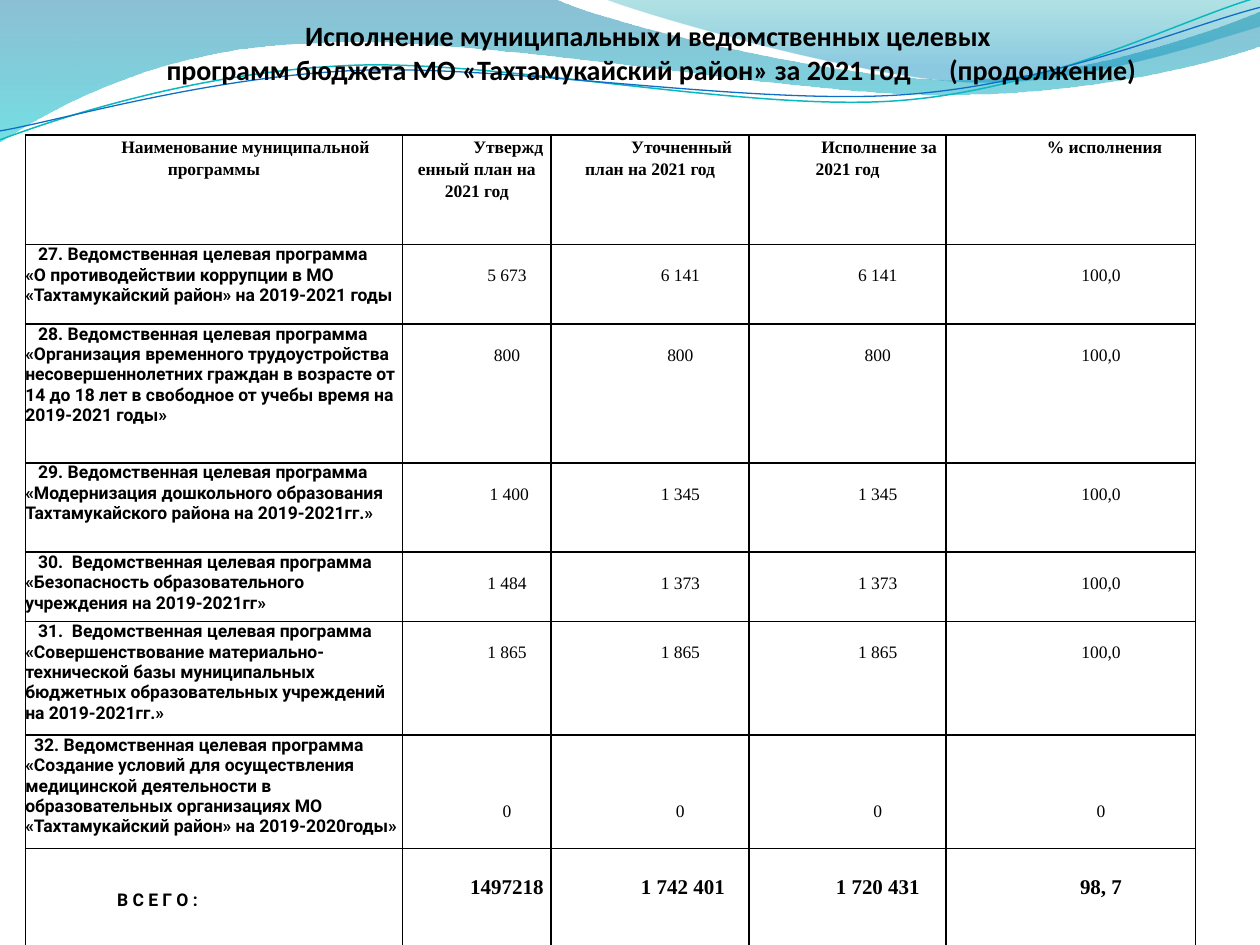
from dataclasses import dataclass

from lxml.etree import SubElement
from pptx import Presentation
from pptx.dml.color import RGBColor
from pptx.enum.text import MSO_ANCHOR, PP_ALIGN as Align
from pptx.oxml.ns import qn
from pptx.util import Cm, Pt


@dataclass(frozen=True)
class Theme:
    ink: str = "000000"
    blue: str = "0074A1"
    cyan: str = "00C6CF"
    teal: str = "00A1A9"
    sky: str = "008BBF"
    teal_line: str = "0AB8BF"
    blue_line: str = "0F6FC6"
    title_font: str = "Calibri"
    name_font: str = "Roboto"
    value_font: str = "Times New Roman"
    title_size: float = 16
    body_size: float = 10
    total_size: float = 12


THEME = Theme()


@dataclass(frozen=True)
class Stop:
    position: float
    color: str
    opacity: int


@dataclass(frozen=True)
class Wave:
    """Outline in cm: two numbers are a straight step, six are a Bézier curve."""
    start: tuple
    steps: tuple
    stops: tuple = ()
    line: str = ""
    width: float = 0


@dataclass(frozen=True)
class Program:
    name: str
    values: tuple
    height: float
    name_indent: float = 0.26
    name_top: float = 0
    value_top: float = 0.38
    value_size: float = THEME.body_size
    value_bold: bool = False


WAVES = (
    Wave((0, 0), ((11.18, -0.03), (12.09, 0.43, 16.87, 1.6, 19.25, 1.6),
                  (21.67, 1.6, 24.33, 0.66, 25.4, 0.23), (25.43, 0.91),
                  (24.97, 1.12, 22.1, 1.93, 18.95, 1.91),
                  (15.8, 1.91, 9.7, 0.71, 6.53, 0.86),
                  (3.28, 0.91, 1.17, 2.11, -0.03, 2.87), (0, 0)),
         stops=(Stop(0, THEME.blue, 45), Stop(1, THEME.cyan, 55))),
    Wave((12.17, -0.03), ((12.93, 0.28, 17.32, 1.57, 19.53, 1.65),
                          (21.74, 1.75, 24.41, 0.81, 25.4, 0.53), (25.4, 0),
                          (12.17, -0.03)),
         stops=(Stop(0, THEME.teal, 30), Stop(0.8, THEME.sky, 45))),
    Wave((0, 2.82), ((1.22, 2.36, 4.01, 1.45, 7.04, 1.32),
                     (10.03, 1.19, 15.06, 2.26, 18.11, 2.03),
                     (21.16, 1.8, 23.83, 0.38, 25.35, -0.05)),
         line=THEME.teal_line, width=0.85),
    Wave((0, 2.64), ((1.19, 2.44, 4.17, 1.55, 7.19, 1.42),
                     (10.24, 1.3, 15.16, 2.13, 18.21, 1.91),
                     (21.23, 1.7, 23.9, 0.53, 25.4, 0.15)),
         line=THEME.blue_line, width=0.75),
)

TITLE = ("Исполнение муниципальных и ведомственных целевых \n"
         "программ бюджета МО «Тахтамукайский район» за 2021 год\t(продолжение)")
HEADINGS = ("Наименование муниципальной программы", "Утвержденный план на 2021 год",
            "Уточненный план на 2021 год", "Исполнение за 2021 год", " % исполнения")
COLUMN_WIDTHS = (7.6, 3, 3.99, 3.97, 5.03)
HEADING_HEIGHT = 2.21
PROGRAMS = (
    Program("27. Ведомственная целевая программа\n«О противодействии коррупции в МО "
            "«Тахтамукайский район» на 2019-2021 годы",
            ("5 673", "6 141", "6 141", "100,0"), 1.6),
    Program("28. Ведомственная целевая программа «Организация временного трудоустройства "
            "несовершеннолетних граждан в возрасте от 14 до 18 лет в свободное от учебы "
            "время на 2019-2021 годы»", ("800", "800", "800", "100,0"), 2.8),
    Program("29. Ведомственная целевая программа «Модернизация дошкольного образования "
            "Тахтамукайского района на 2019-2021гг.»",
            (" 1 400", "1 345", "1 345", "100,0"), 1.8),
    Program("30.\tВедомственная целевая программа «Безопасность образовательного "
            "учреждения на 2019-2021гг»", ("1 484", "1 373", "1 373", "100,0"), 1.4),
    Program("31.\tВедомственная целевая программа «Совершенствование "
            "материально-технической базы муниципальных бюджетных образовательных "
            "учреждений на 2019-2021гг.»", ("1 865", "1 865", "1 865", "100,0"), 2.29),
    Program("32. Ведомственная целевая программа «Создание условий для осуществления "
            "медицинской деятельности в образовательных организациях МО "
            "«Тахтамукайский район» на 2019-2020годы»", ("0",) * 4, 2.29,
            name_indent=0.18, value_top=1.3),
    Program("В С Е Г О :", ("1497218", " 1 742 401", "1 720 431", "98, 7"), 2.79,
            name_indent=1.85, name_top=0.83, value_top=0.48,
            value_size=THEME.total_size, value_bold=True),
)


def add_text(frame, text: str, *, font: str, size: float, bold: bool = True,
             align=Align.LEFT, spacing: float | None = None, indent: float = 0,
             gap: float = 0) -> None:
    """Fill the first paragraph; a tab in the text becomes a space widened by gap points."""
    paragraph = frame.paragraphs[0]
    paragraph.alignment = align
    paragraph.line_spacing = spacing
    properties = paragraph._p.get_or_add_pPr()
    properties.set("marL", "0")
    properties.set("indent", str(Cm(indent)))

    def add_run(words: str):
        run = paragraph.add_run()
        run.text = words
        run.font.name, run.font.size, run.font.bold = font, Pt(size), bold
        run.font.color.rgb = RGBColor.from_string(THEME.ink)
        return run

    for row, line in enumerate(text.split("\n")):
        if row:
            paragraph.add_line_break()
        for part, words in enumerate(line.split("\t")):
            if part:
                add_run(" ")._r.get_or_add_rPr().set("spc", str(round(gap * 100)))
            add_run(words)


def bend(shape, wave: Wave) -> None:
    """Turn the straight segments of the shape into the wave's curves."""
    ends = [wave.start, *(step[-2:] for step in wave.steps)]
    left, top = (min(axis) for axis in zip(*ends))
    segments = list(shape._element.spPr.iter(qn("a:lnTo")))
    for segment, step in zip(segments, wave.steps):
        if len(step) == 2:
            continue
        segment.tag = qn("a:cubicBezTo")
        for point in list(segment):
            segment.remove(point)
        for x, y in zip(step[::2], step[1::2]):
            SubElement(segment, qn("a:pt"), x=str(round((x - left) * 1000)),
                       y=str(round((y - top) * 1000)))


def draw_wave(slide, wave: Wave) -> None:
    start, *ends = [tuple(round(v * 1000) for v in step[-2:])
                    for step in (wave.start, *wave.steps)]
    builder = slide.shapes.build_freeform(*start, scale=Cm(1) / 1000)
    builder.add_line_segments(ends, close=bool(wave.stops))
    shape = builder.convert_to_shape()
    bend(shape, wave)
    shape.shadow.inherit = False
    if not wave.stops:
        shape.fill.background()
        shape.line.color.rgb = RGBColor.from_string(wave.line)
        shape.line.width = Pt(wave.width)
        return
    shape.line.fill.background()
    shape.fill.gradient()
    shape.fill.gradient_angle = 270
    for target, stop in zip(shape.fill.gradient_stops, wave.stops):
        target.position = stop.position
        target.color.rgb = RGBColor.from_string(stop.color)
    colors = shape._element.spPr.find(qn("a:gradFill")).iter(qn("a:srgbClr"))
    for color, stop in zip(colors, wave.stops):
        SubElement(color, qn("a:alpha"), val=str(stop.opacity * 1000))


def format_cell(cell, left: float, right: float, top: float = 0) -> None:
    cell.margin_left, cell.margin_right = Cm(left), Cm(right)
    cell.margin_top, cell.margin_bottom = Cm(top), Cm(0)
    properties = cell._tc.get_or_add_tcPr()
    for side in ("lnL", "lnR", "lnT", "lnB"):
        border = SubElement(properties, qn(f"a:{side}"), w=str(Pt(1)))
        SubElement(SubElement(border, qn("a:solidFill")), qn("a:srgbClr"), val=THEME.ink)
    cell.fill.background()


def draw_table(slide) -> None:
    heights = (HEADING_HEIGHT, *(program.height for program in PROGRAMS))
    table = slide.shapes.add_table(len(heights), len(COLUMN_WIDTHS), Cm(0.51), Cm(2.72),
                                   Cm(sum(COLUMN_WIDTHS)), Cm(sum(heights))).table
    table.first_row = table.horz_banding = False
    for column, width in zip(table.columns, COLUMN_WIDTHS):
        column.width = Cm(width)
    for row, height in zip(table.rows, heights):
        row.height = Cm(height)

    centred = dict(font=THEME.value_font, align=Align.CENTER, spacing=1.15, indent=1.27)
    for column, heading in enumerate(HEADINGS):
        cell = table.cell(0, column)
        format_cell(cell, 0.1, 0.1)
        add_text(cell.text_frame, heading, size=THEME.body_size, **centred)
    for row, program in enumerate(PROGRAMS, 1):
        cell = table.cell(row, 0)
        format_cell(cell, 0, 0, program.name_top)
        add_text(cell.text_frame, program.name, font=THEME.name_font,
                 size=THEME.body_size, indent=program.name_indent, gap=2.5)
        for column, value in enumerate(program.values, 1):
            cell = table.cell(row, column)
            format_cell(cell, 0.05, 0.1, program.value_top)
            add_text(cell.text_frame, value, size=program.value_size,
                     bold=program.value_bold, **centred)


def draw_title(slide) -> None:
    frame = slide.shapes.add_textbox(Cm(1.7), Cm(0.13), Cm(22.86), Cm(1.6)).text_frame
    frame.word_wrap = True
    frame.vertical_anchor = MSO_ANCHOR.BOTTOM
    frame.margin_left = frame.margin_right = frame.margin_bottom = Cm(0)
    frame.margin_top = Cm(0.13)
    add_text(frame, TITLE, font=THEME.title_font, size=THEME.title_size,
             align=Align.CENTER, gap=18)


def main() -> None:
    deck = Presentation()
    deck.slide_width, deck.slide_height = Cm(25.4), Cm(19.05)
    slide = deck.slides.add_slide(deck.slide_layouts[6])
    for wave in WAVES:
        draw_wave(slide, wave)
    draw_table(slide)
    draw_title(slide)
    deck.save("out.pptx")


if __name__ == "__main__":
    main()
